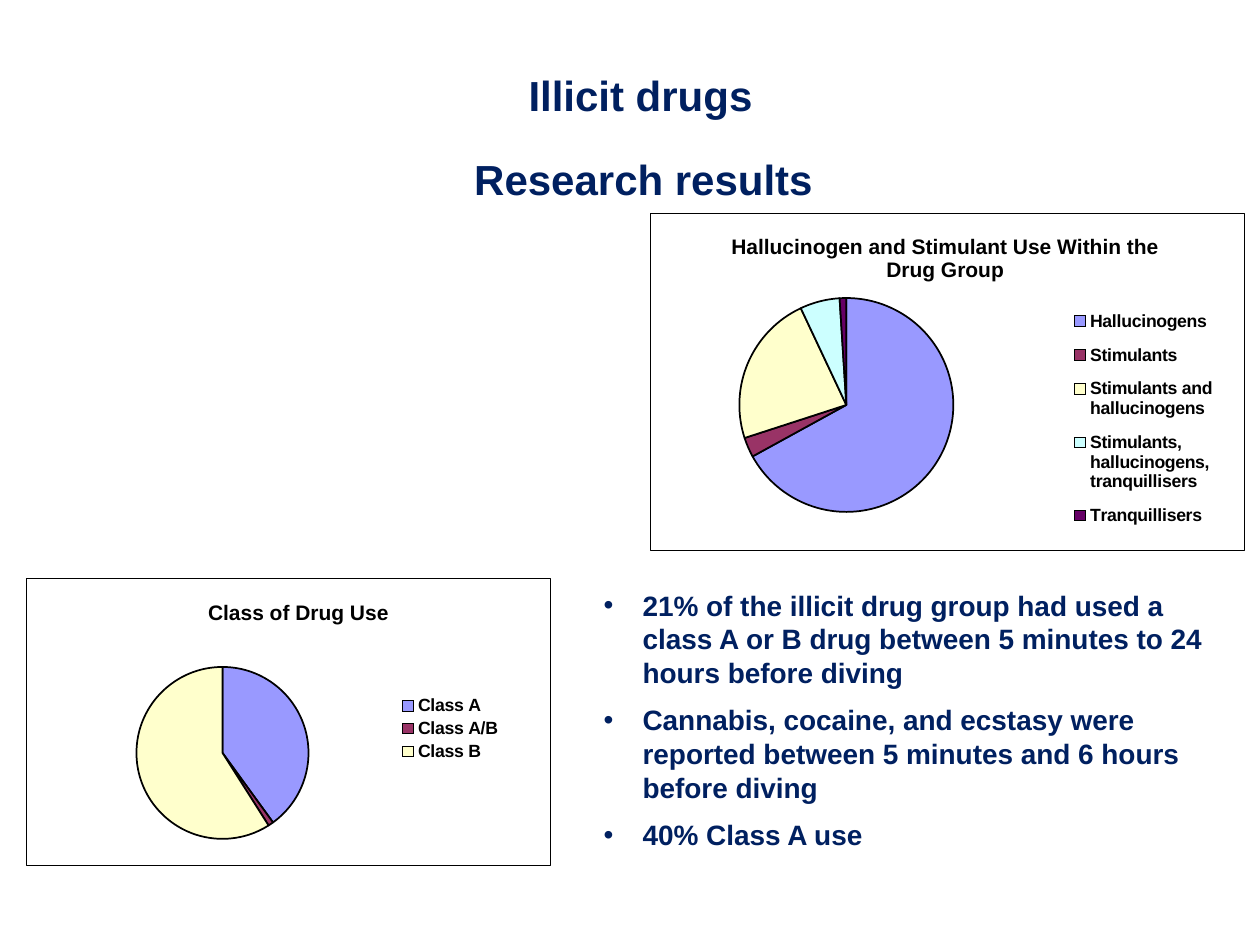
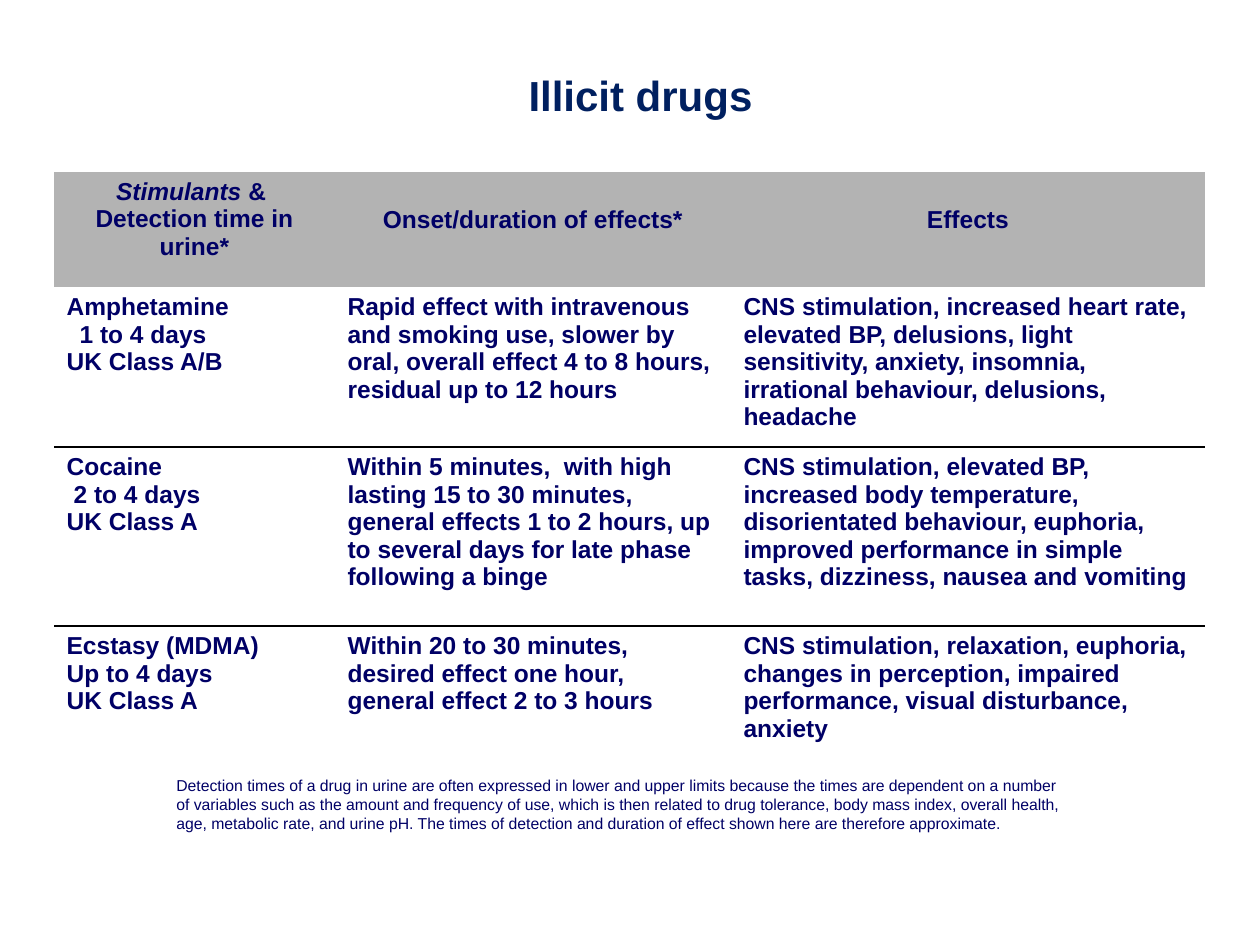
from lxml import etree
from pptx import Presentation
from pptx import util as u
from pptx.chart.data import CategoryChartData
from pptx.dml.color import RGBColor
from pptx.enum import chart as ch, text as t
from pptx.oxml import parse_xml
from pptx.oxml.ns import nsdecls, qn

PX_PER_INCH = 126
FONT = "Arial"
COLORS = {
    "heading": "002060",
    "table_text": "000066",
    "header_fill": "B3B3B3",
    "black": "000000",
    "white": "FFFFFF",
}
SLICES = ["9999FF", "993366", "FFFFCC", "CCFFFF", "660066"]
HEADING_BOX = (105, 55, 1071, 79)
SUBHEADING_BOX = (108, 139, 1071, 79)
NO_STYLE = "{2D5ABB26-0587-4C30-8999-92F81FD0307C}"
COLUMN_WIDTHS = [281, 396, 474]
ROW_HEIGHTS = [115, 160, 179, 147]
CELL_PAD = 6
HEADER_LINE = 28

DRUG_GROUP = [
    ("Hallucinogens", 67),
    ("Stimulants", 3),
    ("Stimulants and hallucinogens", 23),
    ("Stimulants, hallucinogens, tranquillisers", 6),
    ("Tranquillisers", 1),
]
DRUG_CLASSES = [("Class A", 40), ("Class A/B", 1), ("Class B", 59)]
FINDINGS = [
    "21% of the illicit drug group had used a class A or B drug between "
    "5 minutes to 24 hours before diving",
    "Cannabis, cocaine, and ecstasy were reported between 5 minutes and "
    "6 hours before diving",
    "40% Class A use",
]
STIMULANTS = [
    (
        ["Amphetamine", "1 to 4 days", "UK Class A/B"],
        13,
        "Rapid effect with intravenous and smoking use, slower by oral, "
        "overall effect 4 to 8 hours, residual up to 12 hours",
        "CNS stimulation, increased heart rate, elevated BP, delusions, light "
        "sensitivity, anxiety, insomnia, irrational behaviour, delusions, headache",
    ),
    (
        ["Cocaine", "2 to 4 days", "UK Class A"],
        7,
        "Within 5 minutes,  with high lasting 15 to 30 minutes, general effects "
        "1 to 2 hours, up to several days for late phase following a binge",
        "CNS stimulation, elevated BP, increased body temperature, disorientated "
        "behaviour, euphoria, improved performance in simple tasks, dizziness, "
        "nausea and vomiting",
    ),
    (
        ["Ecstasy (MDMA)", "Up to 4 days", "UK Class A"],
        0,
        "Within 20 to 30 minutes, desired effect one hour, general effect 2 to 3 hours",
        "CNS stimulation, relaxation, euphoria, changes in perception, impaired "
        "performance, visual disturbance, anxiety",
    ),
]
FOOTNOTE = (
    "Detection times of a drug in urine are often expressed in lower and upper "
    "limits because the times are dependent on a number of variables such as the "
    "amount and frequency of use, which is then related to drug tolerance, body "
    "mass index, overall health, age, metabolic rate, and urine pH. The times of "
    "detection and duration of effect shown here are therefore approximate."
)


def px(length):
    return u.Emu(round(length * 914400 / PX_PER_INCH))


def emus(box):
    return [px(length) for length in box]


def rgb(name):
    return RGBColor.from_string(COLORS[name])


def set_font(font, size, color, bold=True):
    font.name = FONT
    font.size = u.Pt(size)
    font.bold = bold
    font.color.rgb = rgb(color)


def write(frame, lines, size, color, bold=True, align=t.PP_ALIGN.LEFT):
    frame.text = "\n".join(lines)
    frame.word_wrap = True
    for paragraph in frame.paragraphs:
        paragraph.alignment = align
        set_font(paragraph.font, size, color, bold)


def move(shape, box):
    shape.left, shape.top, shape.width, shape.height = emus(box)


def write_heading(shape, wording):
    frame = shape.text_frame
    write(frame, [wording], 24, "heading", align=t.PP_ALIGN.CENTER)
    frame.auto_size = t.MSO_AUTO_SIZE.NONE
    frame.vertical_anchor = t.MSO_ANCHOR.MIDDLE


def add_titled_slide(deck, layout, wording):
    slide = deck.slides.add_slide(deck.slide_layouts[layout])
    move(slide.shapes.title, HEADING_BOX)
    write_heading(slide.shapes.title, wording)
    return slide


def fill_bullets(body, box, lines):
    move(body, box)
    body.text_frame.text = "\n".join(lines)
    body.text_frame.auto_size = t.MSO_AUTO_SIZE.NONE
    for number, paragraph in enumerate(body.text_frame.paragraphs):
        properties = paragraph._p.get_or_add_pPr()
        properties.set("marL", str(px(39)))
        properties.set("indent", str(px(-39)))
        etree.SubElement(properties, qn("a:buChar")).set("char", "•")
        paragraph.space_before = u.Pt(8 if number else 0)
        set_font(paragraph.font, 16, "heading")


def place_part(part, index, inner=False, **fractions):
    for layout in part.findall(qn("c:layout")):
        part.remove(layout)
    target = '<c:layoutTarget val="inner"/>' if inner else ""
    modes = "".join(f'<c:{axis}Mode val="edge"/>' for axis in "xy")
    values = "".join(f'<c:{key} val="{value}"/>' for key, value in fractions.items())
    part.insert(index, parse_xml(
        f'<c:layout {nsdecls("c")}><c:manualLayout>{target}{modes}{values}'
        "</c:manualLayout></c:layout>"))


def add_pie(slide, box, title, shares, title_at, plot_at, legend_at):
    data = CategoryChartData()
    data.categories = [label for label, _ in shares]
    data.add_series("Series 1", [share for _, share in shares])
    pie = slide.shapes.add_chart(ch.XL_CHART_TYPE.PIE, *emus(box), data).chart
    set_font(pie.font, 10, "black")

    pie.has_title = True
    pie.chart_title.text_frame.text = title
    set_font(pie.chart_title.text_frame.paragraphs[0].font, 12, "black")
    pie.has_legend = True
    pie.legend.position = ch.XL_LEGEND_POSITION.RIGHT
    pie.legend.include_in_layout = False
    set_font(pie.legend.font, 10.1, "black")

    plot = pie.plots[0]
    plot.vary_by_categories = True
    for number in range(len(shares)):
        slice_format = plot.series[0].points[number].format
        slice_format.fill.solid()
        slice_format.fill.fore_color.rgb = RGBColor.from_string(SLICES[number])
        slice_format.line.color.rgb = rgb("black")
        slice_format.line.width = u.Pt(1)

    root = pie.element.find(qn("c:chart"))
    place_part(root.find(qn("c:title")), 1, **title_at)
    place_part(root.find(qn("c:plotArea")), 0, inner=True, **plot_at)
    place_part(root.find(qn("c:legend")), 1, **legend_at)
    root.addnext(parse_xml(
        f'<c:spPr {nsdecls("c", "a")}>{solid("white")}'
        f'<a:ln w="{u.Pt(0.25)}">{solid("black")}</a:ln></c:spPr>'))


def solid(name):
    return f'<a:solidFill><a:srgbClr val="{COLORS[name]}"/></a:solidFill>'


def rule_cell(cell, *sides):
    for side in sides:
        cell._tc.get_or_add_tcPr().insert(0, parse_xml(
            f'<a:ln{side} {nsdecls("a")} w="{u.Pt(1)}">{solid("black")}</a:ln{side}>'))


def fill_header(cells):
    headings = [
        ["Stimulants & ", "Detection time in urine*"],
        ["Onset/duration of effects*"],
        ["Effects"],
    ]
    for cell, lines in zip(cells, headings):
        cell.fill.solid()
        cell.fill.fore_color.rgb = rgb("header_fill")
        write(cell.text_frame, lines, 14, "table_text", align=t.PP_ALIGN.CENTER)
        cell.margin_top = px(CELL_PAD + HEADER_LINE * (2 - len(lines)))
    first_line = cells[0].text_frame.paragraphs[0]
    first_line.runs[0].text = "Stimulants"
    first_line.runs[0].font.italic = True
    first_line.add_run().text = " & "


def add_stimulant_table(slide):
    box = (54, 172, sum(COLUMN_WIDTHS), sum(ROW_HEIGHTS))
    frame = slide.shapes.add_table(len(ROW_HEIGHTS), len(COLUMN_WIDTHS), *emus(box))
    frame._element.xpath(".//a:tableStyleId")[0].text = NO_STYLE
    table = frame.table
    table.first_row = table.horz_banding = False
    for column, width in zip(table.columns, COLUMN_WIDTHS):
        column.width = px(width)
    for row, height in zip(table.rows, ROW_HEIGHTS):
        row.height = px(height)

    fill_header(list(table.rows[0].cells))
    for number, (drug, indent, onset, effects) in enumerate(STIMULANTS, 1):
        cells = list(table.rows[number].cells)
        for cell, lines in zip(cells, [drug, [onset], [effects]]):
            cell.fill.background()
            write(cell.text_frame, lines, 14, "table_text")
            if number < len(STIMULANTS):
                rule_cell(cell, "B")
            if number > 1:
                rule_cell(cell, "T")
        detection_time = cells[0].text_frame.paragraphs[1]
        detection_time._p.get_or_add_pPr().set("marL", str(px(indent)))


def build_results(deck):
    slide = add_titled_slide(deck, 1, "Illicit drugs")
    write_heading(slide.shapes.add_textbox(*emus(SUBHEADING_BOX)), "Research results")
    add_pie(slide, (650, 213, 595, 337),
            "Hallucinogen and Stimulant Use Within the Drug Group", DRUG_GROUP,
            {"x": 0.13, "y": 0.05},
            {"x": 0.15, "y": 0.23, "w": 0.36, "h": 0.68},
            {"x": 0.68, "y": 0.25, "w": 0.3, "h": 0.72})
    add_pie(slide, (26, 578, 524, 287), "Class of Drug Use", DRUG_CLASSES,
            {"x": 0.34, "y": 0.06},
            {"x": 0.2, "y": 0.31, "w": 0.35, "h": 0.6},
            {"x": 0.71, "y": 0.4, "w": 0.2, "h": 0.25})
    fill_bullets(slide.placeholders[1], (591, 582, 655, 285), FINDINGS)


def build_detection(deck):
    slide = add_titled_slide(deck, 5, "Illicit drugs")
    add_stimulant_table(slide)
    footnote = slide.shapes.add_textbox(*emus((164, 770, 917, 69)))
    write(footnote.text_frame, [FOOTNOTE], 9, "table_text", bold=False)


def main():
    deck = Presentation()
    deck.slide_width, deck.slide_height = px(1260), px(945)
    build_results(deck)
    build_detection(deck)
    deck.save("out.pptx")


if __name__ == "__main__":
    main()
